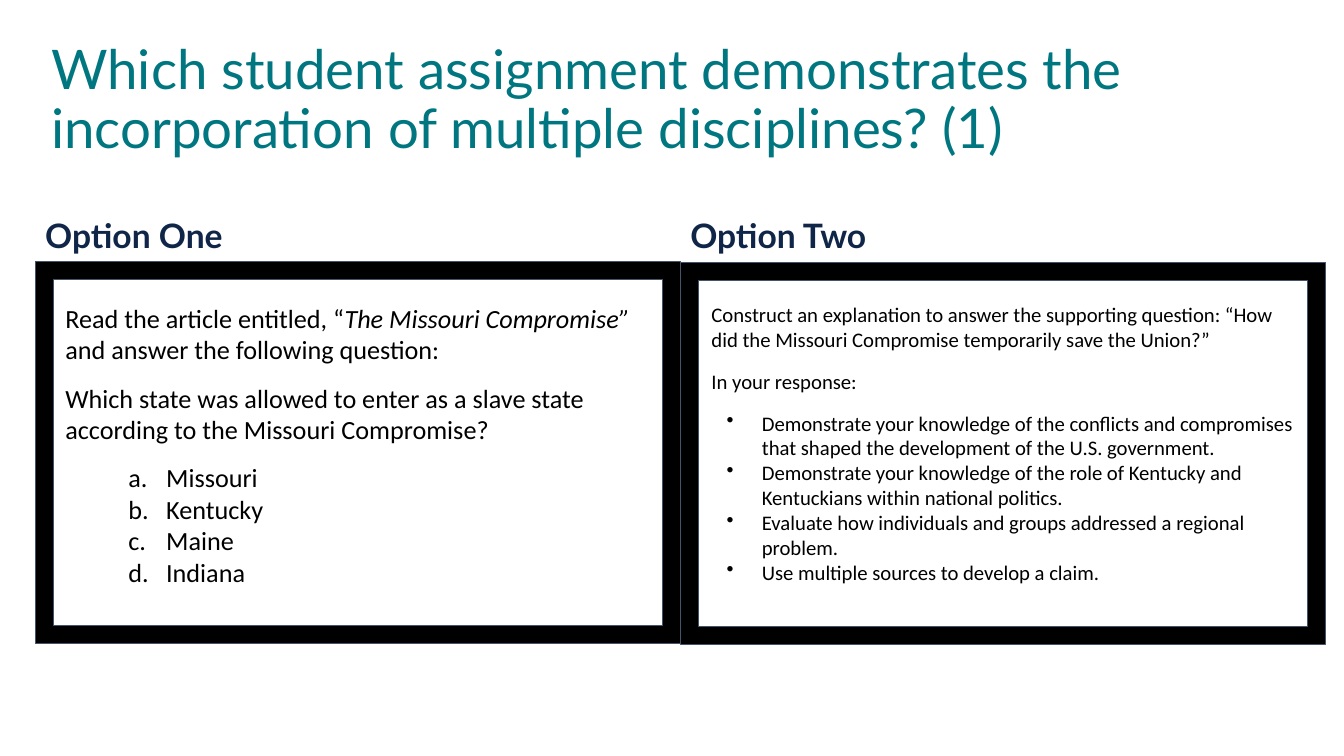
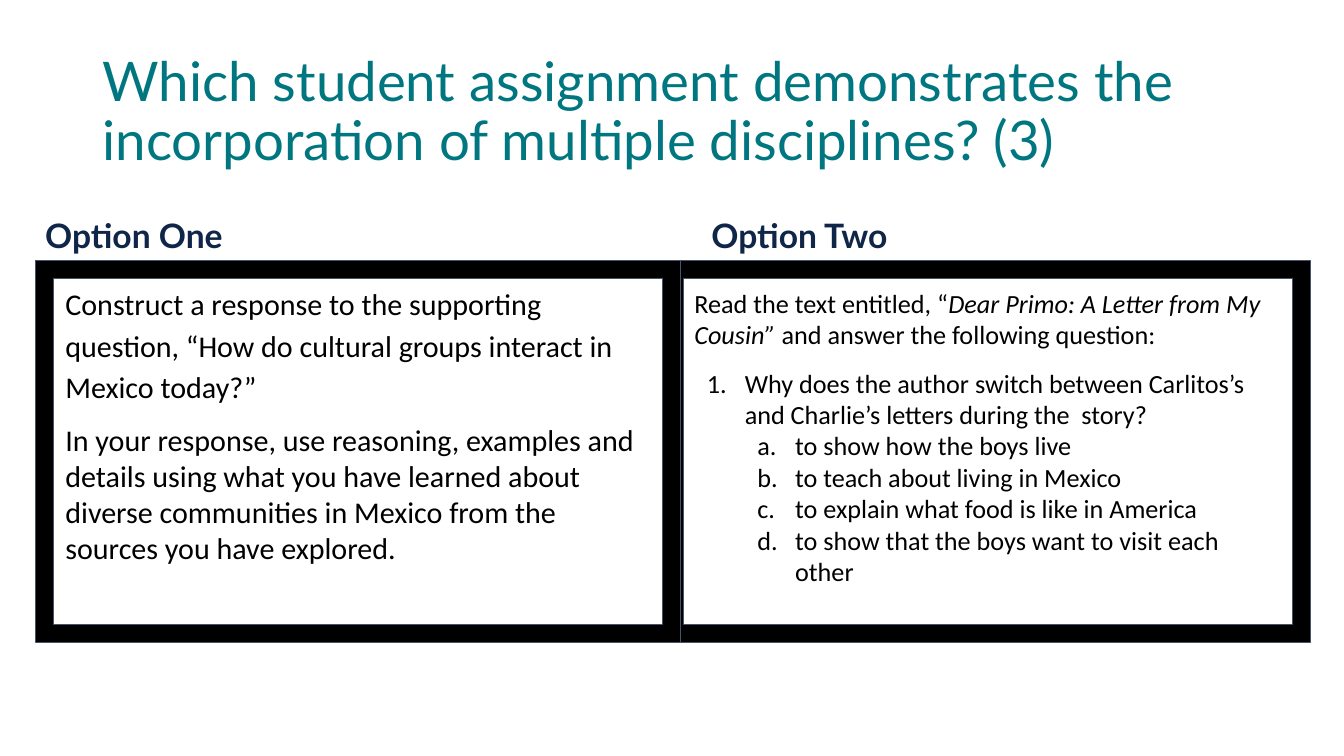
from lxml import etree
from pptx import Presentation
from pptx.dml.color import RGBColor
from pptx.enum import shapes, text
from pptx.oxml import ns
from pptx.util import Pt

COLORS = {
    "title": "007780",
    "heading": "102649",
    "body": "000000",
    "frame": "000000",
    "frame_line": "44546A",
}
TITLE_FONT = "Lato"
BODY_FONT = "Calibri"
PANEL_WIDTH, PANEL_HEIGHT = 460.8, 272.9
FRAME_THICKNESS = 0.047
BODY_WIDTH, BODY_HEIGHT = 432.7, 241.9
HEADING_WIDTH, HEADING_HEIGHT, HEADING_TOP = 408, 42.5, 143.3
QUESTION = "Which student assignment demonstrates the incorporation of multiple disciplines?"

# Marker element, its attributes, left margin, hanging indent, outline level
LISTS = {
    "bullet": ("a:buChar", {"char": "•"}, 36, 25.2, 0),
    "number": ("a:buAutoNum", {"type": "arabicPeriod"}, 36, 27, 0),
    "letter": ("a:buAutoNum", {"type": "alphaLcPeriod"}, 72, 27, 1),
}


def rgb(name):
    return RGBColor.from_string(COLORS[name])


def item(*runs, before=0, spacing=1.0, marker=None):
    """Describe a paragraph; every second run is italic."""
    return {"runs": runs, "before": before, "spacing": spacing, "marker": marker}


def items(marker, *lines, before=0):
    """Describe a list, with a gap only above its first line."""
    return [item(line, marker=marker, before=0 if index else before)
            for index, line in enumerate(lines)]


def set_marker(paragraph, marker):
    tag, attributes, margin, hanging, level = LISTS[marker]
    paragraph.level = level
    properties = paragraph._p.get_or_add_pPr()
    properties.set("marL", str(Pt(margin)))
    properties.set("indent", str(-Pt(hanging)))
    etree.SubElement(properties, ns.qn(tag), attributes)


def add_text(slide, left, top, width, height, paragraphs, *, size, font=BODY_FONT,
             color="body", bold=False, anchor=text.MSO_ANCHOR.TOP):
    box = slide.shapes.add_textbox(Pt(left), Pt(top), Pt(width), Pt(height))
    frame = box.text_frame
    frame.word_wrap = True
    frame.vertical_anchor = anchor
    for index, content in enumerate(paragraphs):
        paragraph = frame.add_paragraph() if index else frame.paragraphs[0]
        if content["marker"]:
            set_marker(paragraph, content["marker"])
        paragraph.space_before = Pt(content["before"])
        paragraph.line_spacing = content["spacing"]
        for position, words in enumerate(content["runs"]):
            run = paragraph.add_run()
            run.text = words
            run.font.name = font
            run.font.size = Pt(size)
            run.font.bold = bold
            run.font.italic = position % 2 == 1
            run.font.color.rgb = rgb(color)


def add_title(slide, number, left, top, width, height):
    add_text(slide, left, top, width, height,
             [item(f"{QUESTION} ({number})", spacing=0.9)], size=39,
             font=TITLE_FONT, color="title", anchor=text.MSO_ANCHOR.MIDDLE)


def add_heading(slide, words, left):
    add_text(slide, left, HEADING_TOP, HEADING_WIDTH, HEADING_HEIGHT,
             [item(words, spacing=0.8)], size=24, font=TITLE_FONT,
             color="heading", bold=True, anchor=text.MSO_ANCHOR.BOTTOM)


def add_body(slide, left, top, paragraphs, size):
    add_text(slide, left, top, BODY_WIDTH, BODY_HEIGHT, paragraphs, size=size)


def add_frame(slide, left, top):
    shape = slide.shapes.add_shape(shapes.MSO_SHAPE.FRAME, Pt(left), Pt(top),
                                   Pt(PANEL_WIDTH), Pt(PANEL_HEIGHT))
    shape.shadow.inherit = False
    shape.adjustments[0] = FRAME_THICKNESS
    shape.fill.solid()
    shape.fill.fore_color.rgb = rgb("frame")
    shape.line.color.rgb = rgb("frame_line")
    shape.line.width = Pt(0.75)


def add_slide(presentation):
    return presentation.slides.add_slide(presentation.slide_layouts[6])


def build_missouri(presentation):
    slide = add_slide(presentation)
    add_title(slide, 1, 29.5, 11.5, 916.6, 121)
    add_heading(slide, "Option One", 25.2)
    add_heading(slide, "Option Two", 486)
    add_body(slide, 39.6, 212.4, [
        item("Read the article entitled, “", "The Missouri Compromise”",
             " and answer the following question:"),
        item("Which state was allowed to enter as a slave state according to "
             "the Missouri Compromise?", before=12),
        *items("letter", "Missouri", "Kentucky", "Maine", "Indiana", before=12),
    ], size=18.7)
    add_body(slide, 501.1, 212.4, [
        item("Construct an explanation to answer the supporting question: “How did "
             "the Missouri Compromise temporarily save the Union?”"),
        item("In your response:", before=12),
        *items("bullet",
               "Demonstrate your knowledge of the conflicts and compromises that "
               "shaped the development of the U.S. government.",
               "Demonstrate your knowledge of the role of Kentucky and Kentuckians "
               "within national politics.",
               "Evaluate how individuals and groups addressed a regional problem.",
               "Use multiple sources to develop a claim.", before=12),
    ], size=14.8)
    add_frame(slide, 25.2, 186.6)
    add_frame(slide, 486, 187.2)


def build_mexico(presentation):
    slide = add_slide(presentation)
    add_title(slide, 3, 66.2, 28.8, 828, 104.4)
    add_heading(slide, "Option One", 25.2)
    add_heading(slide, "Option Two", 501.1)
    add_body(slide, 39.6, 196.6, [
        item("Construct a response to the supporting question, “How do cultural "
             "groups interact in Mexico today?”", spacing=1.15),
        item("In your response, use reasoning, examples and details using what you "
             "have learned about diverse communities in Mexico from the sources you "
             "have explored.", before=12),
    ], size=21.5)
    add_body(slide, 488.9, 201.6, [
        item("Read the text entitled, “", "Dear Primo: A Letter from My Cousin”",
             " and answer the following question:"),
        *items("number", "Why does the author switch between Carlitos’s and "
               "Charlie’s letters during the  story?", before=12),
        *items("letter", "to show how the boys live",
               "to teach about living in Mexico",
               "to explain what food is like in America",
               "to show that the boys want to visit each other"),
    ], size=18.7)
    for left in (475.2, 25.6):
        add_frame(slide, left, 185.8)


def main():
    presentation = Presentation()
    presentation.slide_width = Pt(960)
    presentation.slide_height = Pt(540)
    build_missouri(presentation)
    build_mexico(presentation)
    presentation.save("out.pptx")


if __name__ == "__main__":
    main()
